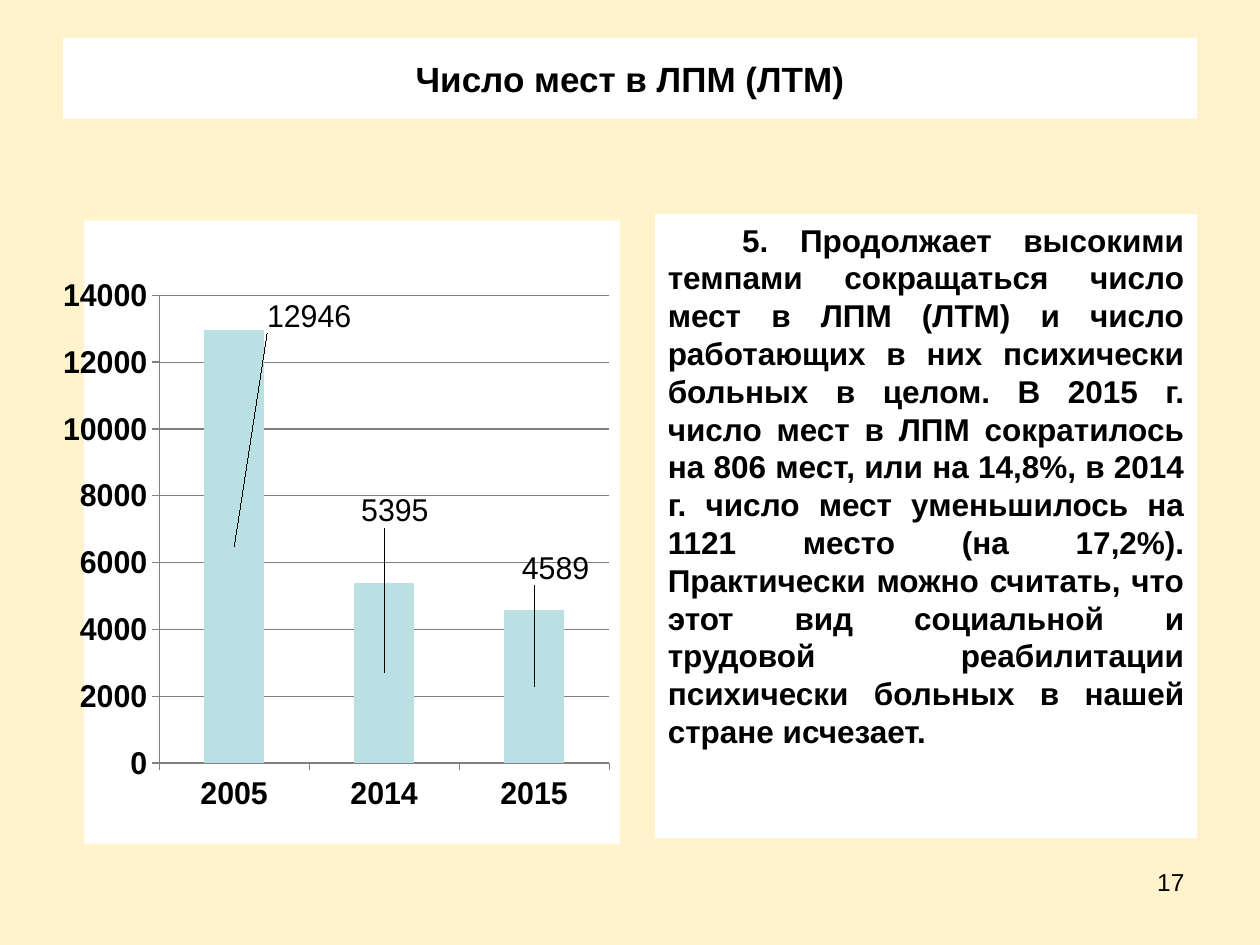
from lxml.etree import SubElement
from pptx import Presentation
from pptx.chart.data import CategoryChartData
from pptx.dml.color import RGBColor
from pptx.enum.chart import XL_CHART_TYPE, XL_TICK_MARK
from pptx.enum.text import MSO_ANCHOR, MSO_AUTO_SIZE, PP_ALIGN
from pptx.oxml import parse_xml
from pptx.oxml.ns import nsdecls, qn
from pptx.util import Inches, Pt

HUES = {"page": "FFF3CD", "panel": "FFFFFF", "ink": "000000",
        "bar": "BBE0E3", "rule": "808080"}
FACE = "Arial"
TITLE = "Число мест в ЛПМ (ЛТМ)"
BODY = ("5. Продолжает высокими темпами сокращаться число мест в ЛПМ (ЛТМ) "
        "и число работающих в них психически больных в целом. В 2015 г. "
        "число мест в ЛПМ сократилось на 806 мест, или на 14,8%, в 2014 г. "
        "число мест уменьшилось на 1121 место (на 17,2%). Практически можно "
        "считать, что этот вид социальной и трудовой реабилитации "
        "психически больных в нашей стране исчезает.")
PAGE = "17"
YEARS = ["2005", "2014", "2015"]
SEATS = [12946, 5395, 4589]
SHIFTS = [(0.14, -0.37), (0.02, -0.26), (0.04, -0.19)]
PLOT = {"x": 0.14, "y": 0.12, "w": 0.84, "h": 0.75}


def paint(fill, hue):
    """Apply a solid colour from the palette."""
    fill.solid()
    fill.fore_color.rgb = RGBColor.from_string(HUES[hue])


def style(font, size, bold):
    """Set the face, size, weight and ink of a font."""
    font.name, font.size, font.bold = FACE, Pt(size), bold
    font.color.rgb = RGBColor.from_string(HUES["ink"])


def write(shape, box, text, size, bold, align, anchor=MSO_ANCHOR.TOP):
    """Place a shape, fill it with one run and return its paragraph."""
    shape.left, shape.top, shape.width, shape.height = map(Inches, box)
    frame = shape.text_frame
    frame.word_wrap = True
    frame.auto_size = MSO_AUTO_SIZE.NONE
    frame.vertical_anchor = anchor
    para = frame.paragraphs[0]
    para.alignment = align
    para.space_before = Pt(0)
    run = para.add_run()
    run.text = text
    style(run.font, size, bold)
    return para


def layout(modes, sizes):
    """Build a manual chart layout element."""
    parts = "".join(f'<c:{tag} val="{val}"/>'
                    for tag, val in [*modes.items(), *sizes.items()])
    return parse_xml(f'<c:layout {nsdecls("c")}><c:manualLayout>{parts}'
                     '</c:manualLayout></c:layout>')


def draw(slide):
    """Add the column chart of seats by year."""
    data = CategoryChartData()
    data.categories = YEARS
    data.add_series("Число мест", SEATS)
    box = map(Inches, (0.5, 1.75, 4.42, 4.95))
    chart = slide.shapes.add_chart(
        XL_CHART_TYPE.COLUMN_STACKED, *box, data).chart
    chart.has_legend = chart.has_title = False
    style(chart.font, 18, False)
    space = chart.element
    panel = parse_xml(
        f'<c:spPr {nsdecls("c", "a")}><a:solidFill><a:srgbClr '
        f'val="{HUES["panel"]}"/></a:solidFill><a:ln><a:noFill/></a:ln></c:spPr>')
    space.find(qn("c:chart")).addnext(panel)
    area = space.find(f'.//{qn("c:plotArea")}')
    for old in area.findall(qn("c:layout")):
        area.remove(old)
    modes = {"layoutTarget": "inner", "xMode": "edge", "yMode": "edge"}
    area.insert(0, layout(modes, PLOT))

    scale = chart.value_axis
    scale.minimum_scale, scale.maximum_scale, scale.major_unit = 0, 14000, 2000
    scale.has_major_gridlines = True
    lines = [scale.major_gridlines.format.line]
    for axis in (chart.category_axis, scale):
        axis.major_tick_mark = XL_TICK_MARK.OUTSIDE
        style(axis.tick_labels.font, 18, True)
        lines.append(axis.format.line)
    for line in lines:
        paint(line.fill, "rule")
        line.width = Pt(0.75)

    plot = chart.plots[0]
    plot.gap_width, plot.overlap, plot.vary_by_categories = 150, 100, False
    bars = plot.series[0]
    paint(bars.format.fill, "bar")
    for num in range(len(SHIFTS)):
        style(bars.points[num].data_label.font, 18, False)
    tags = space.iter(qn("c:dLbl"))
    for tag, shift in zip(tags, SHIFTS):
        tag.find(qn("c:idx")).addnext(layout({}, dict(zip("xy", shift))))


def main():
    """Build the slide on seats in workshops."""
    deck = Presentation()
    deck.slide_width, deck.slide_height = Inches(10), Inches(7.5)
    slide = deck.slides.add_slide(deck.slide_layouts[1])
    paint(slide.background.fill, "page")
    title, body = slide.placeholders
    for shape in (title, body):
        paint(shape.fill, "panel")
    write(title, (0.5, 0.3, 9, 0.64), TITLE, 20, True,
          PP_ALIGN.CENTER, MSO_ANCHOR.MIDDLE)
    draw(slide)
    para = write(body, (5.2, 1.7, 4.3, 4.95), BODY, 18, True, PP_ALIGN.JUSTIFY)
    para.line_spacing = Pt(21.6)
    props = para._p.get_or_add_pPr()
    props.set("marL", "0")
    props.set("indent", str(Inches(0.59)))
    SubElement(props, qn("a:buNone"))
    spot = (7.17, 6.83, 2.33, 0.52)
    note = slide.shapes.add_textbox(*map(Inches, spot))
    write(note, spot, PAGE, 14, False, PP_ALIGN.RIGHT)
    deck.save("out.pptx")


if __name__ == "__main__":
    main()
